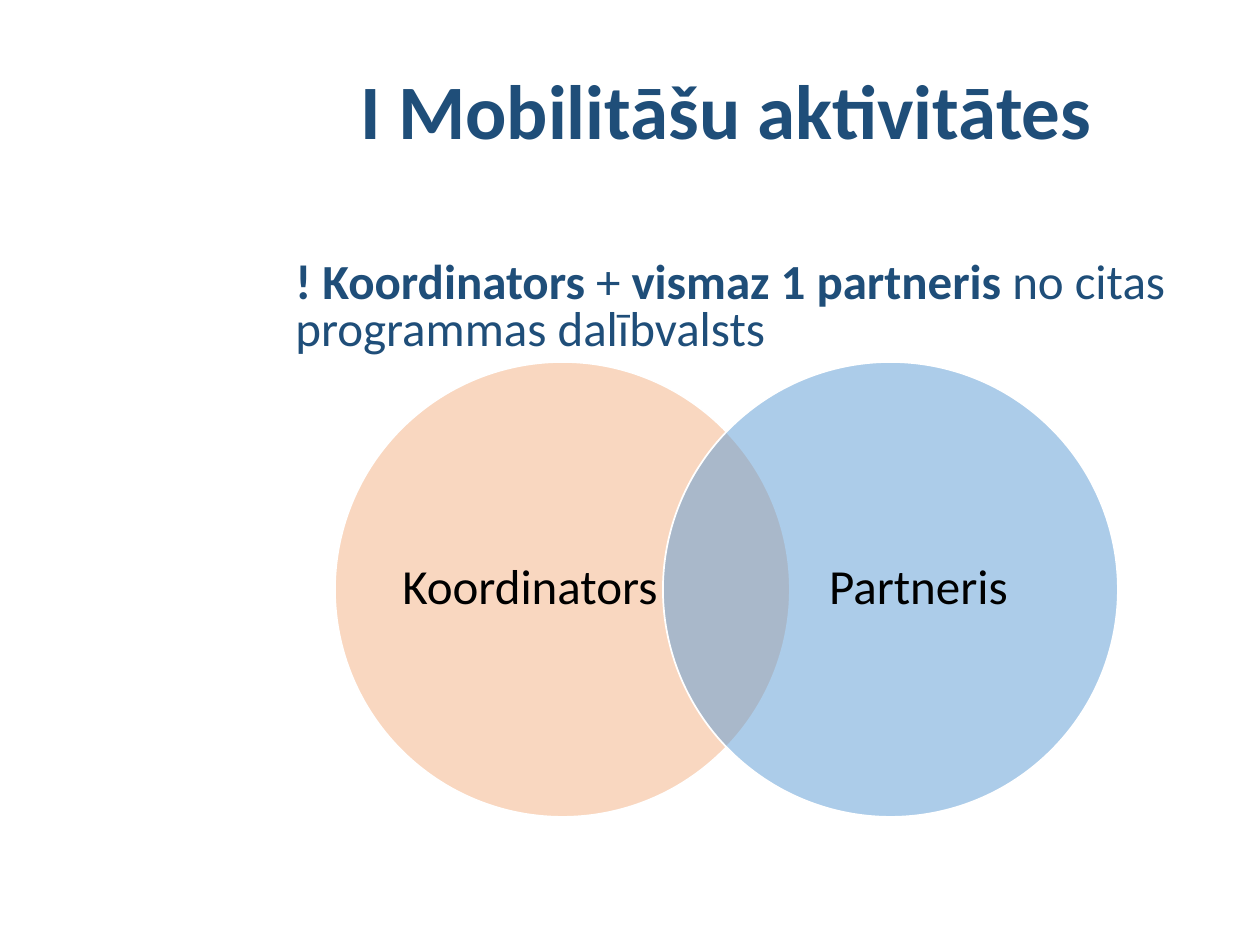
from lxml import etree
from pptx import Presentation
from pptx.dml.color import RGBColor
from pptx.enum import shapes, text
from pptx.oxml.ns import qn
from pptx.util import Pt

NAVY, BLACK, WHITE = "1F4E79", "000000", "FFFFFF"
TITLE = [("I Mobilitāšu aktivitātes", True)]
RULE = [
    ("! Koordinators ", True),
    ("+ ", False),
    ("vismaz 1 partneris ", True),
    ("no citas programmas dalībvalsts", False),
]
ROLES = [("Koordinators", "F4B183", 399), ("Partneris ", "5B9BD5", 793)]
CIRCLE_LEFT, CIRCLE_TOP, DIAMETER, CIRCLE_STEP = 335, 362, 455, 328
LABEL_TOP, LABEL_WIDTH, LABEL_HEIGHT = 415, 262, 348


def px(n):
    return round(n * 914400 / 126)


def rgb(value):
    return RGBColor.from_string(value)


def add_words(slide, box, pieces, size, color, spacing, align=None, anchor=None, inset=True):
    words = slide.shapes.add_textbox(*map(px, box))
    frame = words.text_frame
    frame.word_wrap = True
    if anchor is not None:
        frame.vertical_anchor = anchor
    if not inset:
        frame.margin_left = frame.margin_right = frame.margin_top = frame.margin_bottom = 0
    line = frame.paragraphs[0]
    line.line_spacing = spacing
    if align is not None:
        line.alignment = align
    for wording, bold in pieces:
        run = line.add_run()
        run.text = wording
        run.font.name = "Calibri"
        run.font.size = Pt(size)
        run.font.bold = bold
        run.font.color.rgb = rgb(color)
    return line


def add_circle(slide, left, color):
    circle = slide.shapes.add_shape(
        shapes.MSO_SHAPE.OVAL, px(left), px(CIRCLE_TOP), px(DIAMETER), px(DIAMETER))
    circle.shadow.inherit = False
    circle.fill.solid()
    circle.fill.fore_color.rgb = rgb(color)
    tint = circle.fill._xPr.find(qn("a:solidFill"))[0]
    etree.SubElement(tint, qn("a:alpha"), val="50000")
    circle.line.color.rgb = rgb(WHITE)
    circle.line.width = Pt(1)


def main():
    deck = Presentation()
    deck.slide_width, deck.slide_height = px(1260), px(945)
    slide = deck.slides.add_slide(deck.slide_layouts[6])
    centre, middle = text.PP_ALIGN.CENTER, text.MSO_ANCHOR.MIDDLE

    add_words(slide, (280, 50, 893, 130), TITLE, 44, NAVY, 0.9, centre, middle)
    rule = add_words(slide, (220, 256, 976, 203), RULE, 28, NAVY, 0.8)
    rule.level = 1
    indent = rule._p.get_or_add_pPr()
    indent.set("marL", str(px(63)))
    indent.set("indent", "0")

    for i, (role, color, label_left) in enumerate(ROLES):
        add_circle(slide, CIRCLE_LEFT + i * CIRCLE_STEP, color)
        add_words(slide, (label_left, LABEL_TOP, LABEL_WIDTH, LABEL_HEIGHT),
                  [(role, False)], 28, BLACK, 0.9, centre, middle, inset=False)

    deck.save("out.pptx")


if __name__ == "__main__":
    main()
